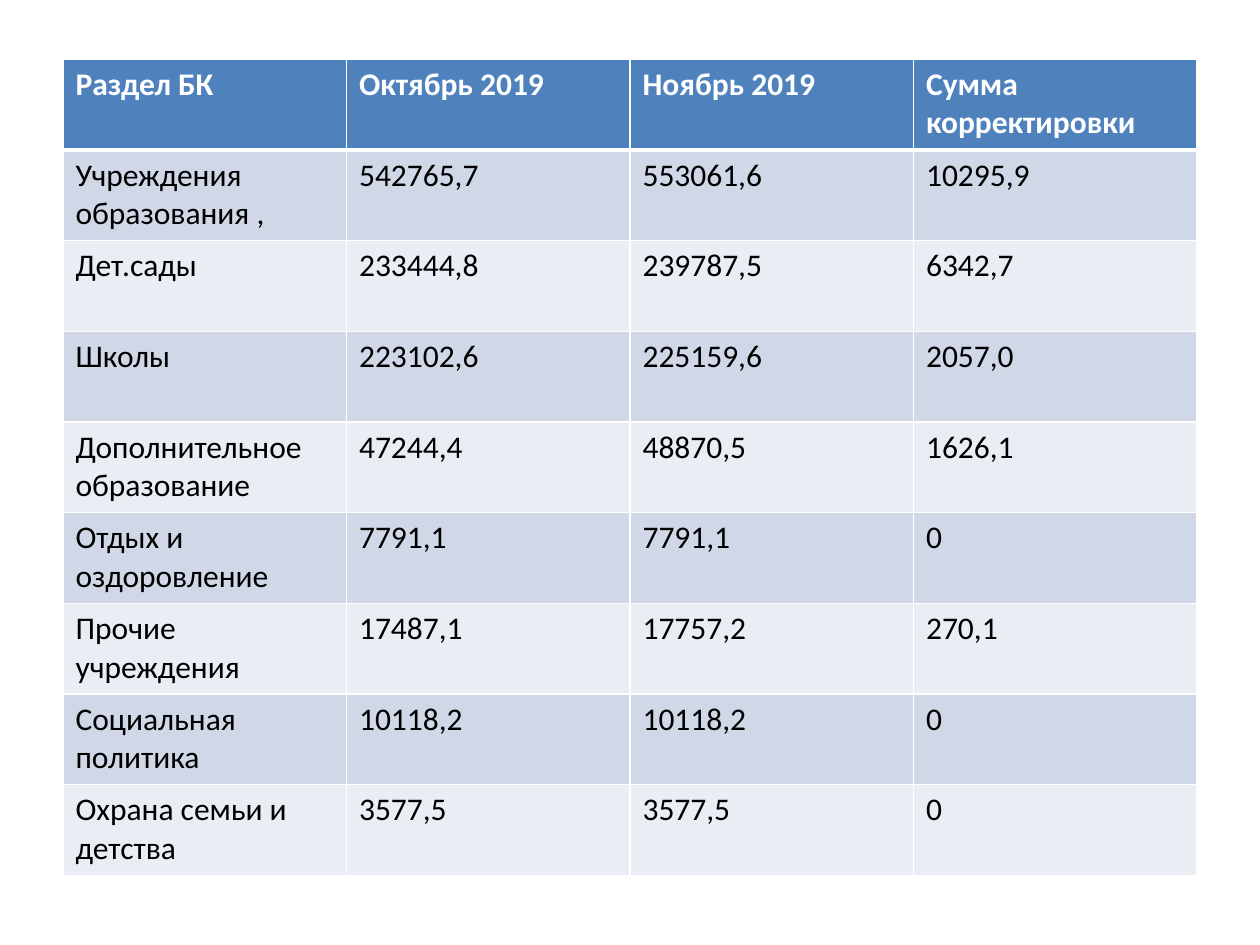
from lxml import etree
from pptx import Presentation
from pptx.dml.color import RGBColor
from pptx.oxml.ns import qn
from pptx.util import Inches, Pt

WHITE = RGBColor(0xFF, 0xFF, 0xFF)
BLACK = RGBColor(0x00, 0x00, 0x00)
HEADER_BLUE = RGBColor(0x4F, 0x81, 0xBD)
BAND_DARK = RGBColor(0xD0, 0xD8, 0xE8)
BAND_LIGHT = RGBColor(0xE9, 0xED, 0xF4)

BLANK_LAYOUT = 6
SLIDE_WIDTH, SLIDE_HEIGHT = Inches(10), Inches(7.5)
MARGIN, TABLE_TOP = Inches(0.5), Inches(0.47)
ROW_HEIGHT = Inches(0.72)
THIN, THICK = Pt(1), Pt(3)

HEADINGS = ("Раздел БК", "Октябрь 2019", "Ноябрь 2019", "Сумма корректировки")
BUDGET = (
    ("Учреждения образования ,", "542765,7", "553061,6", "10295,9"),
    ("Дет.сады", "233444,8", "239787,5", "6342,7"),
    ("Школы", "223102,6", "225159,6", "2057,0"),
    ("Дополнительное образование", "47244,4", "48870,5", "1626,1"),
    ("Отдых и оздоровление", "7791,1", "7791,1", "0"),
    ("Прочие учреждения", "17487,1", "17757,2", "270,1"),
    ("Социальная политика", "10118,2", "10118,2", "0"),
    ("Охрана семьи и детства", "3577,5", "3577,5", "0"),
)


def write_text(frame, text, *, size=18, font="Calibri", color=BLACK, bold=False):
    run = frame.paragraphs[0].add_run()
    run.text = text
    run.font.size = Pt(size)
    run.font.name = font
    run.font.color.rgb = color
    run.font.bold = bold


def set_borders(cell, *, top=THIN, bottom=THIN, color=WHITE):
    properties = cell._tc.get_or_add_tcPr()
    widths = {"a:lnL": THIN, "a:lnR": THIN, "a:lnT": top, "a:lnB": bottom}
    for position, (side, width) in enumerate(widths.items()):
        border = etree.Element(qn(side), w=str(width))
        fill = etree.SubElement(border, qn("a:solidFill"))
        etree.SubElement(fill, qn("a:srgbClr"), val=str(color))
        properties.insert(position, border)


def fill_row(cells, texts, *, background, top=THIN, bottom=THIN, **text_format):
    for cell, text in zip(cells, texts):
        cell.fill.solid()
        cell.fill.fore_color.rgb = background
        set_borders(cell, top=top, bottom=bottom)
        write_text(cell.text_frame, text, **text_format)


def add_budget_table(slide):
    row_count = len(BUDGET) + 1
    table = slide.shapes.add_table(
        row_count, len(HEADINGS), MARGIN, TABLE_TOP,
        SLIDE_WIDTH - 2 * MARGIN, ROW_HEIGHT * row_count,
    ).table
    header, *body = table.rows
    fill_row(header.cells, HEADINGS, background=HEADER_BLUE,
             bottom=THICK, color=WHITE, bold=True)
    for index, (row, texts) in enumerate(zip(body, BUDGET)):
        fill_row(row.cells, texts,
                 background=BAND_LIGHT if index % 2 else BAND_DARK,
                 top=THIN if index else THICK)


def main():
    presentation = Presentation()
    presentation.slide_width = SLIDE_WIDTH
    presentation.slide_height = SLIDE_HEIGHT
    slide = presentation.slides.add_slide(presentation.slide_layouts[BLANK_LAYOUT])
    add_budget_table(slide)
    presentation.save("out.pptx")


if __name__ == "__main__":
    main()
